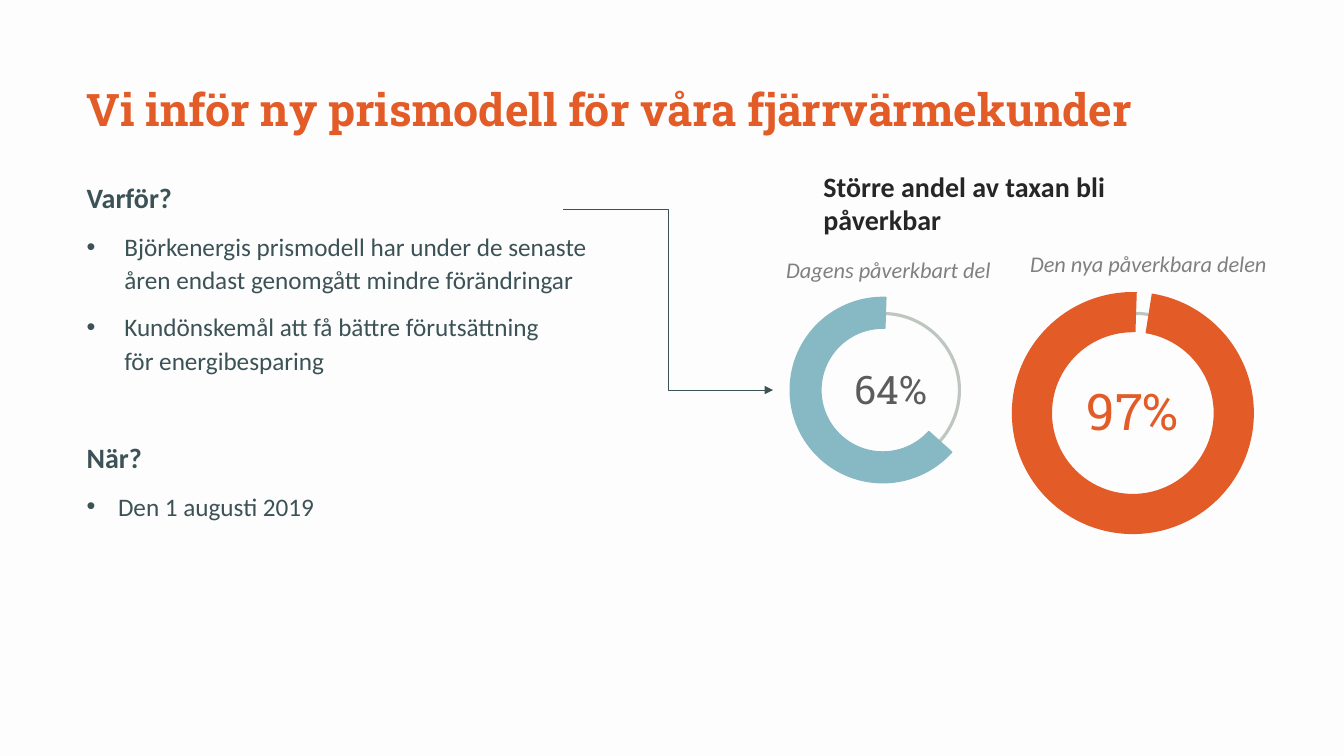
from lxml import etree
from pptx import Presentation
from pptx.dml.color import RGBColor
from pptx.enum.shapes import MSO_CONNECTOR, MSO_SHAPE
from pptx.enum.text import MSO_ANCHOR, MSO_AUTO_SIZE, PP_ALIGN
from pptx.oxml.ns import qn
from pptx.util import Cm, Pt

ELLIPSE, BLOCK_ARC = MSO_SHAPE.OVAL, MSO_SHAPE.BLOCK_ARC
ELBOW = MSO_CONNECTOR.ELBOW
LEFT, CENTER = PP_ALIGN.LEFT, PP_ALIGN.CENTER
MIDDLE = MSO_ANCHOR.MIDDLE
NO_FIT, GROW = MSO_AUTO_SIZE.NONE, MSO_AUTO_SIZE.SHAPE_TO_FIT_TEXT

COLORS = {
    "background": "FCFDFC", "orange": "E35B27", "slate": "3C5256",
    "blue": "86B9C4", "track": "BEC6BF", "value": "5C5C5C",
    "caption": "808080", "heading": "262626",
}
SERIF, SANS = "Roboto Slab", "Calibri"

TITLE = {"name": SERIF, "size": Pt(32), "bold": True, "color": "orange"}
SUBHEAD = {"name": SANS, "size": Pt(20), "bold": True, "color": "slate"}
BULLET = {"name": SANS, "size": Pt(18), "bold": False, "color": "slate"}
CAPTION = {"name": SANS, "size": Pt(16), "italic": True, "color": "caption"}
HEADING = {"name": SANS, "size": Pt(20), "bold": True, "color": "heading"}
TODAY_VALUE = {"name": SERIF, "size": Pt(28), "color": "value"}
NEW_VALUE = {"name": SERIF, "size": Pt(36), "color": "orange"}

# Text, format, hanging indent in cm (0 means no bullet), space before in points
BODY = [
    ("Varför?", SUBHEAD, 0, 0),
    ("Björkenergis prismodell har under de senaste\v"
     "åren endast genomgått mindre förändringar", BULLET, 0.95, 10),
    ("Kundönskemål att få bättre förutsättning\vför energibesparing",
     BULLET, 0.95, 10),
    ("När?", SUBHEAD, 0, 44),
    ("Den 1 augusti 2019", BULLET, 0.79, 10),
]


def rgb(color):
    return RGBColor.from_string(COLORS[color])


def format_font(font, values):
    for attribute, value in values.items():
        if attribute == "color":
            font.color.rgb = rgb(value)
        else:
            setattr(font, attribute, value)


def write(paragraph, text, values, align=LEFT):
    paragraph.text = text
    paragraph.alignment = align
    for run in paragraph.runs:
        format_font(run.font, values)


def place(shape, left, top, width, height):
    shape.left, shape.top = Cm(left), Cm(top)
    shape.width, shape.height = Cm(width), Cm(height)


def set_bullet(paragraph, indent):
    properties = paragraph._p.get_or_add_pPr()
    properties.set("marL", str(Cm(indent)))
    properties.set("indent", str(-Cm(indent)))
    if indent:
        etree.SubElement(properties, qn("a:buFont"), typeface="Arial")
        etree.SubElement(properties, qn("a:buChar"), char="•")
    else:
        etree.SubElement(properties, qn("a:buNone"))


def fill_title(shape, text):
    place(shape, 1.93, 1.4, 29.21, 2.84)
    frame = shape.text_frame
    frame.auto_size = NO_FIT
    frame.vertical_anchor = MIDDLE
    write(frame.paragraphs[0], text, TITLE)
    frame.paragraphs[0].line_spacing = 0.9


def fill_body(shape):
    place(shape, 1.93, 4.34, 14.94, 12.09)
    frame = shape.text_frame
    frame.auto_size = NO_FIT
    for index, (text, values, indent, space) in enumerate(BODY):
        paragraph = frame.add_paragraph() if index else frame.paragraphs[0]
        set_bullet(paragraph, indent)
        write(paragraph, text, values)
        paragraph.line_spacing = 1.1
        paragraph.space_before = Pt(space)


def add_text(slide, box, text, values, align=CENTER):
    shape = slide.shapes.add_textbox(*map(Cm, box))
    frame = shape.text_frame
    frame.word_wrap = True
    frame.auto_size = GROW
    write(frame.paragraphs[0], text, values, align)


def add_round(slide, kind, center, diameter):
    left, top = (position - diameter / 2 for position in center)
    shape = slide.shapes.add_shape(
        kind, Cm(left), Cm(top), Cm(diameter), Cm(diameter))
    shape.shadow.inherit = False
    return shape


def add_gauge(slide, center, track_size, arc_size, start, color, outlined):
    track = add_round(slide, ELLIPSE, center, track_size)
    track.fill.background()
    track.line.color.rgb = rgb("track")
    track.line.width = Pt(2.25)

    arc = add_round(slide, BLOCK_ARC, center, arc_size)
    # Angles in degrees; one adjustment unit is 100000/60000 of a degree
    for index, value in enumerate((start * 0.6, 271.87 * 0.6, 0.166)):
        arc.adjustments[index] = value
    arc.fill.solid()
    arc.fill.fore_color.rgb = rgb(color)
    if outlined:
        arc.line.color.rgb = rgb(color)
        arc.line.width = Pt(1)
    else:
        arc.line.fill.background()


def add_arrow(slide, *ends):
    arrow = slide.shapes.add_connector(ELBOW, *map(Cm, ends))
    arrow.line.color.rgb = rgb("slate")
    arrow.line.width = Pt(0.5)
    properties = arrow._element.spPr
    etree.SubElement(properties.find(qn("a:ln")), qn("a:tailEnd"), type="triangle")
    etree.SubElement(properties, qn("a:effectLst"))


def main():
    presentation = Presentation()
    presentation.slide_width, presentation.slide_height = Cm(33.87), Cm(19.05)
    slide = presentation.slides.add_slide(presentation.slide_layouts[1])
    slide.background.fill.solid()
    slide.background.fill.fore_color.rgb = rgb("background")

    # Title and reasons
    fill_title(slide.shapes.title, "Vi inför ny prismodell för våra fjärrvärmekunder")
    fill_body(slide.placeholders[1])

    # Share today
    add_gauge(slide, (22.25, 9.83), 3.86, 4.67, 42.03, "blue", True)
    add_text(slide, (20.9, 9.07, 3.1, 1.45), "64%", TODAY_VALUE)
    add_text(slide, (19.48, 6.32, 5.82, 0.94), "Dagens påverkbart del", CAPTION)

    # Share in the new model
    add_gauge(slide, (28.55, 10.41), 5.03, 6.1, 279.02, "orange", False)
    add_text(slide, (26.97, 9.45, 3.15, 1.8), "97%", NEW_VALUE)
    add_text(slide, (25.5, 6.17, 6.88, 0.94), "Den nya påverkbara delen", CAPTION)

    # Heading and arrow to the gauges
    add_text(slide, (20.5, 4.14, 10.24, 1.12),
             "Större andel av taxan bli påverkbar", HEADING, LEFT)
    add_arrow(slide, 14.2, 5.28, 19.48, 9.83)

    presentation.save("out.pptx")


if __name__ == "__main__":
    main()
